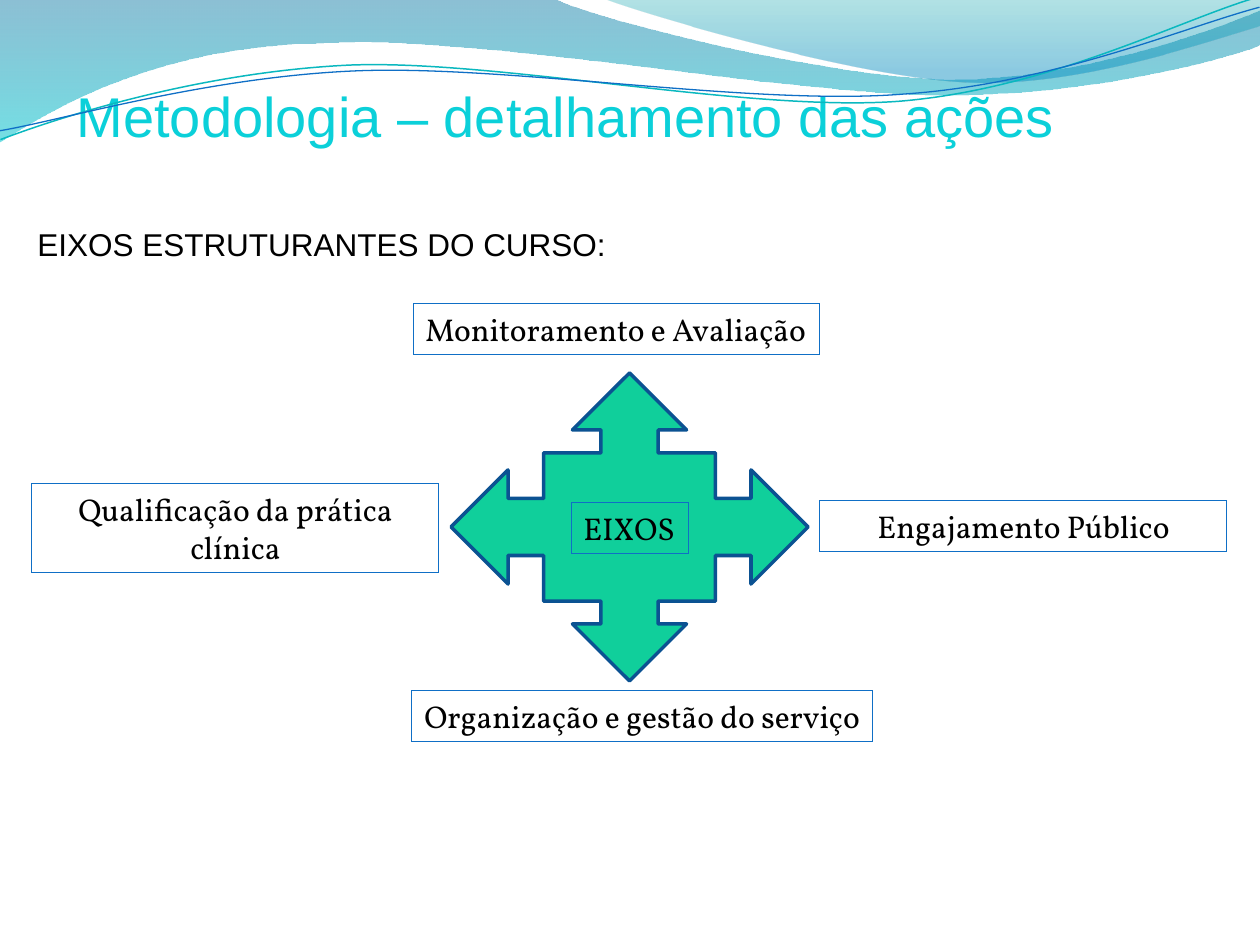
"""Build the slide on the structuring axes of the course."""
from dataclasses import dataclass

from lxml.etree import SubElement
from pptx import Presentation
from pptx.dml.color import RGBColor
from pptx.enum.shapes import MSO_SHAPE as Shape
from pptx.enum.text import MSO_ANCHOR as Anchor, MSO_AUTO_SIZE as AutoSize, PP_ALIGN as Align
from pptx.oxml.ns import qn
from pptx.util import Pt

SCALE = 914400 / 126


@dataclass(frozen=True)
class Theme:
    heading_font: str = "Arial"
    label_font: str = "Vollkorn"
    title_size: int = 32
    text_size: int = 18
    title: str = "0BD0D9"
    text: str = "000000"
    border: str = "0F6FC6"
    teal_line: str = "0AB8BF"
    arrow: str = "10CF9B"
    arrow_border: str = "0B5292"
    back_wave: tuple = ((0, "0074A1", 45), (1, "00C6CF", 55))
    front_wave: tuple = ((0, "00A1A9", 30), (0.8, "008BBF", 45))


THEME = Theme()

BACK_WAVE = [
    (0, 0), (554, -1),
    (600, 21, 837, 79, 955, 79), (1075, 79, 1207, 33, 1260, 11),
    (1261, 45),
    (1239, 55, 1096, 96, 940, 95), (784, 94, 481, 35, 324, 43), (163, 45, 58, 105, -1, 142),
]
FRONT_WAVE = [
    (604, -1),
    (641, 14, 859, 78, 969, 82), (1079, 87, 1211, 40, 1260, 26),
    (1260, 0),
]
TEAL_LINE = [
    (-2, 110),
    (59, 90, 200, 52, 350, 52), (498, 53, 745, 118, 897, 114), (1048, 109, 1184, 45, 1260, 27),
]
BLUE_LINE = [
    (-2, 101),
    (58, 94, 207, 57, 357, 58), (508, 59, 751, 112, 902, 107), (1052, 104, 1187, 53, 1262, 37),
]
LABELS = [
    ("Monitoramento e Avaliação", (413, 304, 407, 51), Align.LEFT),
    ("Engajamento Público", (820, 501, 407, 51), Align.CENTER),
    ("Organização e gestão do serviço", (412, 691, 461, 51), Align.LEFT),
    ("Qualificação da prática clínica", (32, 484, 407, 89), Align.CENTER),
    ("EIXOS", (571, 503, 118, 51), Align.LEFT),
]


def px(value):
    return round(value * SCALE)


def box(bounds):
    return [px(value) for value in bounds]


def color(value):
    return RGBColor.from_string(value)


def set_line(shape, value, width=None):
    shape.line.color.rgb = color(value)
    if width:
        shape.line.width = Pt(width)


def add_outline(slide, segments, close):
    """Draw an outline whose segments hold one point, or the three points of a cubic curve."""
    points = [
        (px(x), px(y))
        for segment in segments
        for x, y in zip(segment[::2], segment[1::2])
    ]
    builder = slide.shapes.build_freeform(*points[0])
    builder.add_line_segments(points[1:], close=close)
    shape = builder.convert_to_shape()
    shape.shadow.inherit = False
    steps = iter(list(shape.element.iter(qn("a:lnTo"))))
    for segment in segments[1:]:
        first = next(steps)
        if len(segment) == 6:
            curve = first.makeelement(qn("a:cubicBezTo"))
            first.addprevious(curve)
            for step in (first, next(steps), next(steps)):
                curve.append(step[0])
                step.getparent().remove(step)
    return shape


def add_wave(slide, segments, stops):
    shape = add_outline(slide, segments, True)
    shape.line.fill.background()
    shape.fill.gradient()
    shape.fill.gradient_angle = 270
    for stop, (position, value, _) in zip(shape.fill.gradient_stops, stops):
        stop.position = position
        stop.color.rgb = color(value)
    fills = shape.element.spPr.iter(qn("a:srgbClr"))
    for fill, (_, _, opacity) in zip(fills, stops):
        SubElement(fill, qn("a:alpha")).set("val", str(opacity * 1000))


def add_wave_line(slide, segments, value, width):
    shape = add_outline(slide, segments, False)
    shape.rotation = 357.3
    shape.fill.background()
    set_line(shape, value, width)


def write(frame, text, font, size, value, align):
    frame.word_wrap = True
    paragraph = frame.paragraphs[0]
    paragraph.alignment = align
    run = paragraph.add_run()
    run.text = text
    run.font.name = font
    run.font.size = Pt(size)
    run.font.color.rgb = color(value)


def set_title(slide, text, bounds):
    title = slide.shapes.title
    title.left, title.top, title.width, title.height = box(bounds)
    title.text_frame.vertical_anchor = Anchor.MIDDLE
    write(title.text_frame, text, THEME.heading_font, THEME.title_size, THEME.title, Align.LEFT)


def add_heading(slide, text, bounds):
    frame = slide.shapes.add_textbox(*box(bounds)).text_frame
    frame.margin_top = px(50)
    write(frame, text, THEME.heading_font, THEME.text_size, THEME.text, Align.JUSTIFY)


def add_arrows(slide, bounds):
    arrows = slide.shapes.add_shape(Shape.QUAD_ARROW_CALLOUT, *box(bounds))
    arrows.shadow.inherit = False
    arrows.fill.solid()
    arrows.fill.fore_color.rgb = color(THEME.arrow)
    set_line(arrows, THEME.arrow_border, 2)


def add_label(slide, text, bounds, align):
    label = slide.shapes.add_textbox(*box(bounds))
    set_line(label, THEME.border)
    write(label.text_frame, text, THEME.label_font, THEME.text_size, THEME.text, align)
    label.text_frame.auto_size = AutoSize.SHAPE_TO_FIT_TEXT


def main():
    presentation = Presentation()
    presentation.slide_width, presentation.slide_height = px(1260), px(945)
    slide = presentation.slides.add_slide(presentation.slide_layouts[5])
    add_wave(slide, BACK_WAVE, THEME.back_wave)
    add_wave(slide, FRONT_WAVE, THEME.front_wave)
    add_wave_line(slide, TEAL_LINE, THEME.teal_line, 0.85)
    add_wave_line(slide, BLUE_LINE, THEME.border, 0.75)
    set_title(slide, "Metodologia – detalhamento das ações", (64, 75, 1081, 81))
    add_heading(slide, "EIXOS ESTRUTURANTES DO CURSO:", (25, 175, 1191, 664))
    add_arrows(slide, (451, 373, 357, 308))
    for text, bounds, align in LABELS:
        add_label(slide, text, bounds, align)
    presentation.save("out.pptx")


if __name__ == "__main__":
    main()
